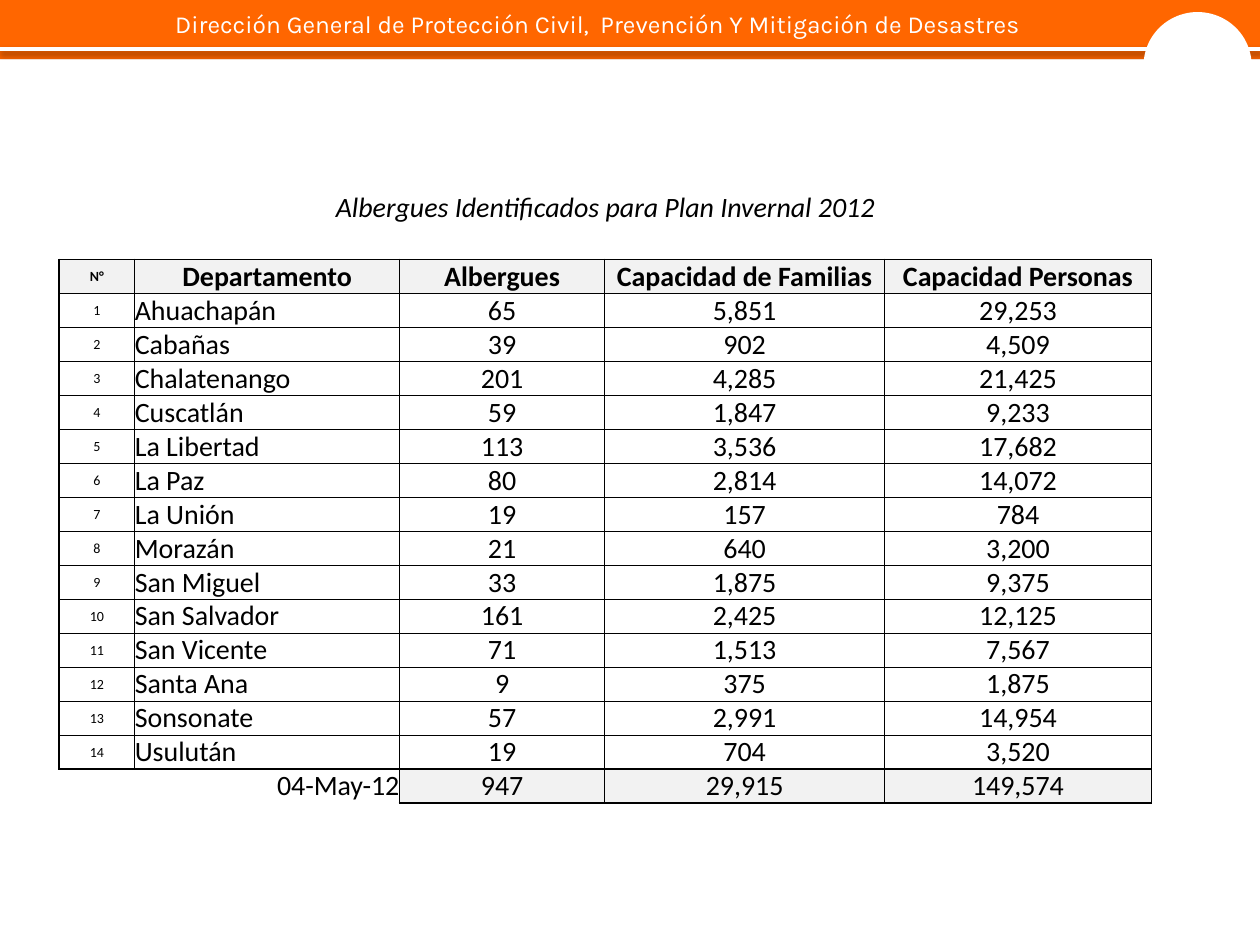
from dataclasses import dataclass

from lxml.etree import SubElement
from pptx import Presentation
from pptx.dml.color import RGBColor
from pptx.enum.shapes import MSO_CONNECTOR, MSO_SHAPE
from pptx.enum.text import MSO_ANCHOR, MSO_AUTO_SIZE, PP_ALIGN
from pptx.oxml import parse_xml
from pptx.oxml.ns import nsdecls, qn
from pptx.util import Inches, Pt


@dataclass(frozen=True)
class Theme:
    """Colours, fonts and point sizes of the slide."""
    orange: str = "FF6600"
    white: str = "FFFFFF"
    black: str = "000000"
    shade: str = "F2F2F2"
    banner_font: str = "Karla"
    table_font: str = "Calibri"
    banner_size: int = 14
    body_size: int = 16
    small_size: int = 8
    rule: int = 2
    thick: float = 1
    thin: float = 0.5


BANNER = "Dirección General de Protección Civil,  Prevención Y Mitigación de Desastres"
CAPTION = "Albergues Identificados para Plan Invernal 2012"
HEADERS = ["N°", "Departamento", "Albergues", "Capacidad de Familias", "Capacidad Personas"]
SHELTERS = [
    ("Ahuachapán", "65", "5,851", "29,253"),
    ("Cabañas", "39", "902", "4,509"),
    ("Chalatenango", "201", "4,285", "21,425"),
    ("Cuscatlán", "59", "1,847", "9,233"),
    ("La Libertad", "113", "3,536", "17,682"),
    ("La Paz", "80", "2,814", "14,072"),
    ("La Unión", "19", "157", "784"),
    ("Morazán", "21", "640", "3,200"),
    ("San Miguel", "33", "1,875", "9,375"),
    ("San Salvador", "161", "2,425", "12,125"),
    ("San Vicente", "71", "1,513", "7,567"),
    ("Santa Ana", "9", "375", "1,875"),
    ("Sonsonate", "57", "2,991", "14,954"),
    ("Usulután", "19", "704", "3,520"),
]
TOTALS = ["04-May-12", "", "947", "29,915", "149,574"]
BLANK = [""] * 5
ROWS = [BLANK, [CAPTION, *BLANK[1:]], BLANK, HEADERS,
        *([str(n), *row] for n, row in enumerate(SHELTERS, 1)), TOTALS]
CAPTION_ROW, HEADER_ROW, TOTAL_ROW = 1, 3, len(ROWS) - 1
COL_WIDTHS = [0.6, 2.1, 1.63, 2.22, 2.12]
ROW_HEIGHTS = [0.49, 0.28] + [0.27] * (len(ROWS) - 2)


class SlideBuilder:
    """Draws styled elements on the current slide."""

    def __init__(self, s, theme):
        self.s = s
        self.theme = theme

    def apply(self, target, values):
        """Set each attribute named in values."""
        for name, value in values.items():
            setattr(target, name, value)

    def add_text(self, p, text, color, **font):
        """Add a run of text with its font settings."""
        r = p.add_run()
        r.text = text
        self.apply(r.font, font)
        r.font.color.rgb = RGBColor.from_string(color)

    def shape(self, kind, box, fill, line=None):
        """Add a filled preset shape with an optional outline."""
        sp = self.s.shapes.add_shape(kind, *map(Inches, box))
        sp.shadow.inherit = False
        sp.fill.solid()
        sp.fill.fore_color.rgb = RGBColor.from_string(fill)
        if line:
            sp.line.color.rgb = RGBColor.from_string(line)
            sp.line.width = Pt(self.theme.rule)
        else:
            sp.line.fill.background()

    def rule(self, start, end, color):
        """Add a straight line with a soft shadow below it."""
        sp = self.s.shapes.add_connector(MSO_CONNECTOR.STRAIGHT, *map(Inches, start + end))
        sp.line.color.rgb = RGBColor.from_string(color)
        sp.line.width = Pt(self.theme.rule)
        sp._element.spPr.append(parse_xml(
            f'<a:effectLst {nsdecls("a")}><a:outerShdw blurRad="{Pt(3.1)}" dist="{Pt(1.6)}" '
            f'dir="5400000" rotWithShape="0"><a:srgbClr val="{self.theme.black}">'
            '<a:alpha val="38000"/></a:srgbClr></a:outerShdw></a:effectLst>'))

    def title(self, text, box):
        """Place the title placeholder in front of the banner."""
        sp = self.s.shapes.title
        self.s.shapes._spTree.append(sp._element)
        self.apply(sp, dict(zip(("left", "top", "width", "height"), map(Inches, box))))
        tf = sp.text_frame
        self.apply(tf, {"word_wrap": True, "vertical_anchor": MSO_ANCHOR.TOP,
                        "auto_size": MSO_AUTO_SIZE.SHAPE_TO_FIT_TEXT})
        p = tf.paragraphs[0]
        p.alignment = PP_ALIGN.JUSTIFY
        self.add_text(p, text, self.theme.white, name=self.theme.banner_font,
                      size=Pt(self.theme.banner_size))

    def border(self, cell, position, side, width):
        """Draw one cell edge, or clear it when width is None."""
        ln = parse_xml(f'<a:ln{side} {nsdecls("a")}/>')
        if width:
            ln.set("w", str(Pt(width)))
            fill = SubElement(ln, qn("a:solidFill"))
            SubElement(fill, qn("a:srgbClr")).set("val", self.theme.black)
        else:
            SubElement(ln, qn("a:noFill"))
        cell._tc.get_or_add_tcPr().insert(position, ln)

    def borders(self, cell, row, col):
        """Derive the four edges of a cell from the grid lines."""
        def vertical(x):
            if HEADER_ROW <= row < TOTAL_ROW or row == TOTAL_ROW and x >= 2:
                return self.theme.thick if x in (0, 2, 5) else self.theme.thin

        def horizontal(y):
            if HEADER_ROW <= y <= TOTAL_ROW or y > TOTAL_ROW and col >= 2:
                heavy = (HEADER_ROW, HEADER_ROW + 1, TOTAL_ROW, TOTAL_ROW + 1)
                return self.theme.thick if y in heavy else self.theme.thin

        edges = {"L": vertical(col), "R": vertical(col + cell.span_width),
                 "T": horizontal(row), "B": horizontal(row + 1)}
        for position, (side, width) in enumerate(edges.items()):
            self.border(cell, position, side, width)

    def cell(self, cell, row, col, text):
        """Fill, align, label and outline one table cell."""
        t = self.theme
        anchor = MSO_ANCHOR.BOTTOM if row == CAPTION_ROW else MSO_ANCHOR.MIDDLE
        self.apply(cell, {"margin_left": 0, "margin_right": 0, "margin_top": 0,
                          "margin_bottom": 0, "vertical_anchor": anchor})
        if row == HEADER_ROW or row == TOTAL_ROW and col >= 2:
            cell.fill.solid()
            cell.fill.fore_color.rgb = RGBColor.from_string(t.shade)
        else:
            cell.fill.background()
        self.borders(cell, row, col)
        p = cell.text_frame.paragraphs[0]
        if not text:
            p._p.get_or_add_endParaRPr().set("sz", str(t.small_size * 100))
            return
        p.alignment = PP_ALIGN.CENTER
        if row == TOTAL_ROW and col == 0:
            p.alignment = PP_ALIGN.RIGHT
        elif HEADER_ROW < row < TOTAL_ROW and col == 1:
            p.alignment = PP_ALIGN.LEFT
        small = col == 0 and HEADER_ROW <= row < TOTAL_ROW
        self.add_text(p, text, t.black, name=t.table_font, bold=row == HEADER_ROW,
                      italic=row == CAPTION_ROW, size=Pt(t.small_size if small else t.body_size))

    def table(self, left, top):
        """Add the shelter table with its caption and totals."""
        size = sum(COL_WIDTHS), sum(ROW_HEIGHTS)
        table = self.s.shapes.add_table(len(ROWS), len(COL_WIDTHS),
                                        *map(Inches, (left, top, *size))).table
        self.apply(table, {"first_row": False, "horz_banding": False})
        for column, width in zip(table.columns, COL_WIDTHS):
            column.width = Inches(width)
        for row, height in zip(table.rows, ROW_HEIGHTS):
            row.height = Inches(height)
        for row, last in ((0, 4), (CAPTION_ROW, 4), (TOTAL_ROW, 1)):
            table.cell(row, 0).merge(table.cell(row, last))
        for row, texts in enumerate(ROWS):
            for col, text in enumerate(texts):
                self.cell(table.cell(row, col), row, col, text)


def main():
    """Build the shelter slide."""
    prs = Presentation()
    prs.slide_width, prs.slide_height = Inches(10), Inches(7.5)
    theme = Theme()
    b = SlideBuilder(prs.slides.add_slide(prs.slide_layouts[5]), theme)
    b.shape(MSO_SHAPE.RECTANGLE, (0, 0, 10, 0.47), theme.orange)
    b.rule((0, 0.39), (10, 0.39), theme.white)
    b.title(BANNER, (1.29, 0.02, 8.91, 0.33))
    b.shape(MSO_SHAPE.OVAL, (9.09, 0.11, 0.83, 0.82), theme.white, theme.white)
    b.table(0.47, 1.02)
    prs.save("out.pptx")


if __name__ == "__main__":
    main()
